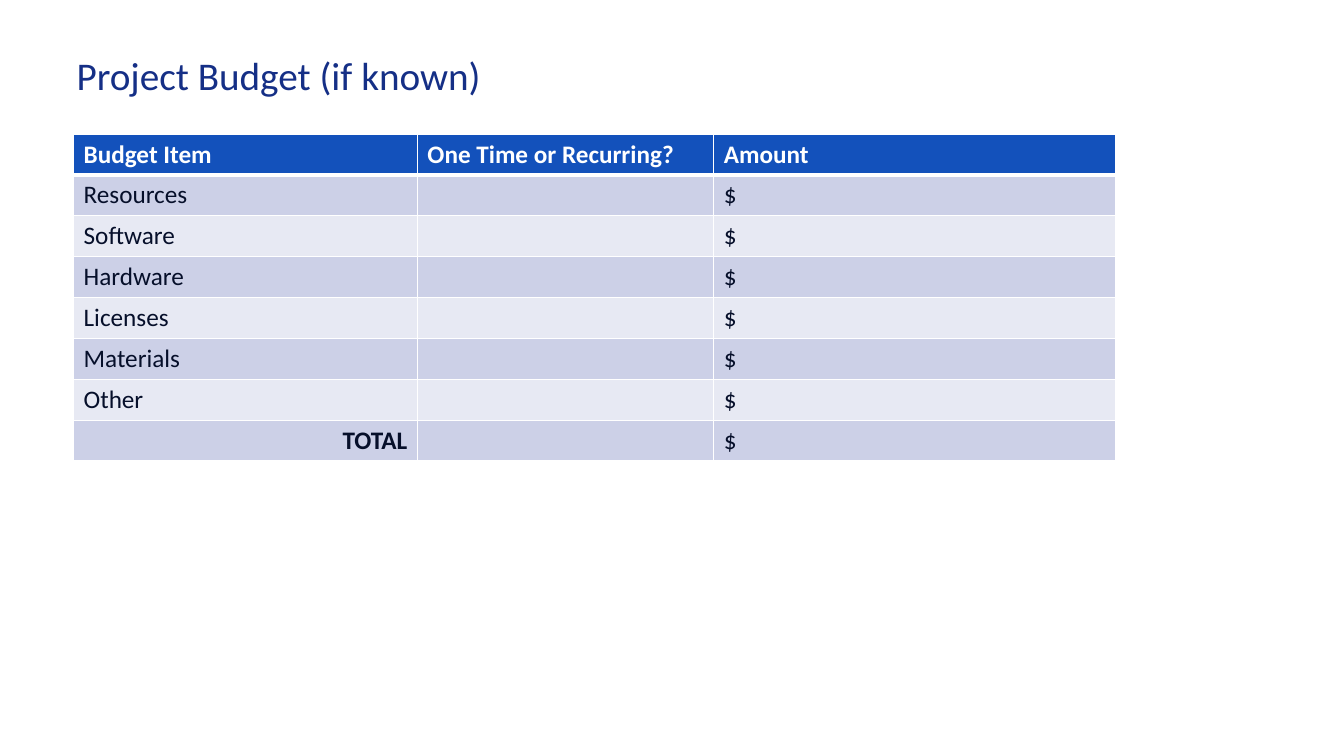
from lxml import etree
from pptx import Presentation
from pptx import util as u
from pptx.dml.color import RGBColor
from pptx.enum import text
from pptx.oxml.ns import qn

WIDE, HIGH = 13.33, 7.5
COLS = (3.41, 2.94, 3.99)
ROW = 0.405
HEAD = ("Budget Item", "One Time or Recurring?", "Amount")
ITEMS = ("Resources", "Software", "Hardware", "Licenses", "Materials", "Other", "TOTAL")
BLUE, NAVY, INK, WHITE = "1351BB", "152F86", "060F2A", "FFFFFF"
BANDS = ("CCD0E7", "E7E9F3")


def paint(target, color):
    """Give a fill or a font a solid colour."""
    if hasattr(target, "solid"):
        target.solid()
        target.fore_color.rgb = RGBColor.from_string(color)
    else:
        target.color.rgb = RGBColor.from_string(color)


def style(par, color, **form):
    for name, value in {"name": "Calibri", **form}.items():
        setattr(par.font, name, value)
    paint(par.font, color)


def border(cell, base):
    """Draw white cell edges, with the bottom one base points wide."""
    props = cell._tc.get_or_add_tcPr()
    for spot, (tag, width) in enumerate((("lnL", 1), ("lnR", 1), ("lnT", 1), ("lnB", base))):
        line = etree.Element(qn("a:" + tag), w=str(u.Pt(width)))
        fill = etree.SubElement(line, qn("a:solidFill"))
        etree.SubElement(fill, qn("a:srgbClr"), val=WHITE)
        props.insert(spot, line)


def put_title(slide, words):
    title = slide.shapes.title
    place = {"left": 0.66, "top": 0.39, "width": 5.21, "height": 0.77}
    for name, value in place.items():
        setattr(title, name, u.Inches(value))
    frame = title.text_frame
    frame.text = words
    frame.word_wrap = True
    frame.auto_size = text.MSO_AUTO_SIZE.NONE
    frame.vertical_anchor = text.MSO_ANCHOR.MIDDLE
    par = frame.paragraphs[0]
    par.alignment = text.PP_ALIGN.LEFT
    par.line_spacing = 0.9
    style(par, NAVY, size=u.Pt(28))


def put_table(slide, rows):
    area = [u.Inches(n) for n in (0.73, 1.33, sum(COLS), ROW * len(rows))]
    table = slide.shapes.add_table(len(rows), len(COLS), *area).table
    for col, width in zip(table.columns, COLS):
        col.width = u.Inches(width)
    for r, row in enumerate(rows):
        table.rows[r].height = u.Inches(ROW)
        for c, words in enumerate(row):
            cell = table.cell(r, c)
            cell.text = words
            paint(cell.fill, BANDS[(r - 1) % 2] if r else BLUE)
            border(cell, 1 if r else 3)
            par = cell.text_frame.paragraphs[0]
            total = words == "TOTAL"
            if total:
                par.alignment = text.PP_ALIGN.RIGHT
            style(par, INK if r else WHITE, size=u.Pt(18), bold=r == 0 or total)


def main():
    deck = Presentation()
    deck.slide_width, deck.slide_height = u.Inches(WIDE), u.Inches(HIGH)
    slide = deck.slides.add_slide(deck.slide_layouts[5])
    put_title(slide, "Project Budget (if known)")
    put_table(slide, [HEAD] + [(item, "", "$") for item in ITEMS])
    deck.save("out.pptx")


if __name__ == "__main__":
    main()
